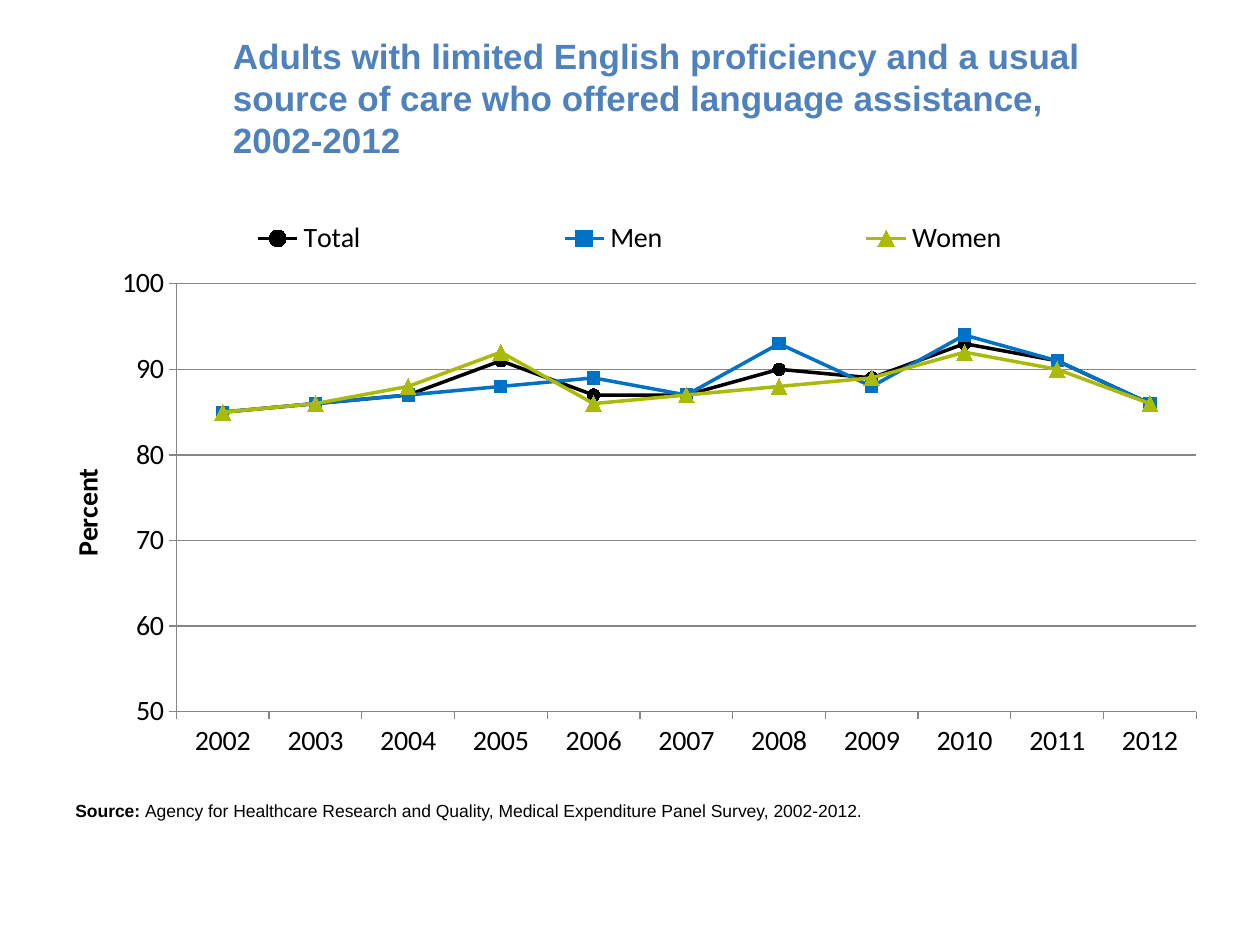
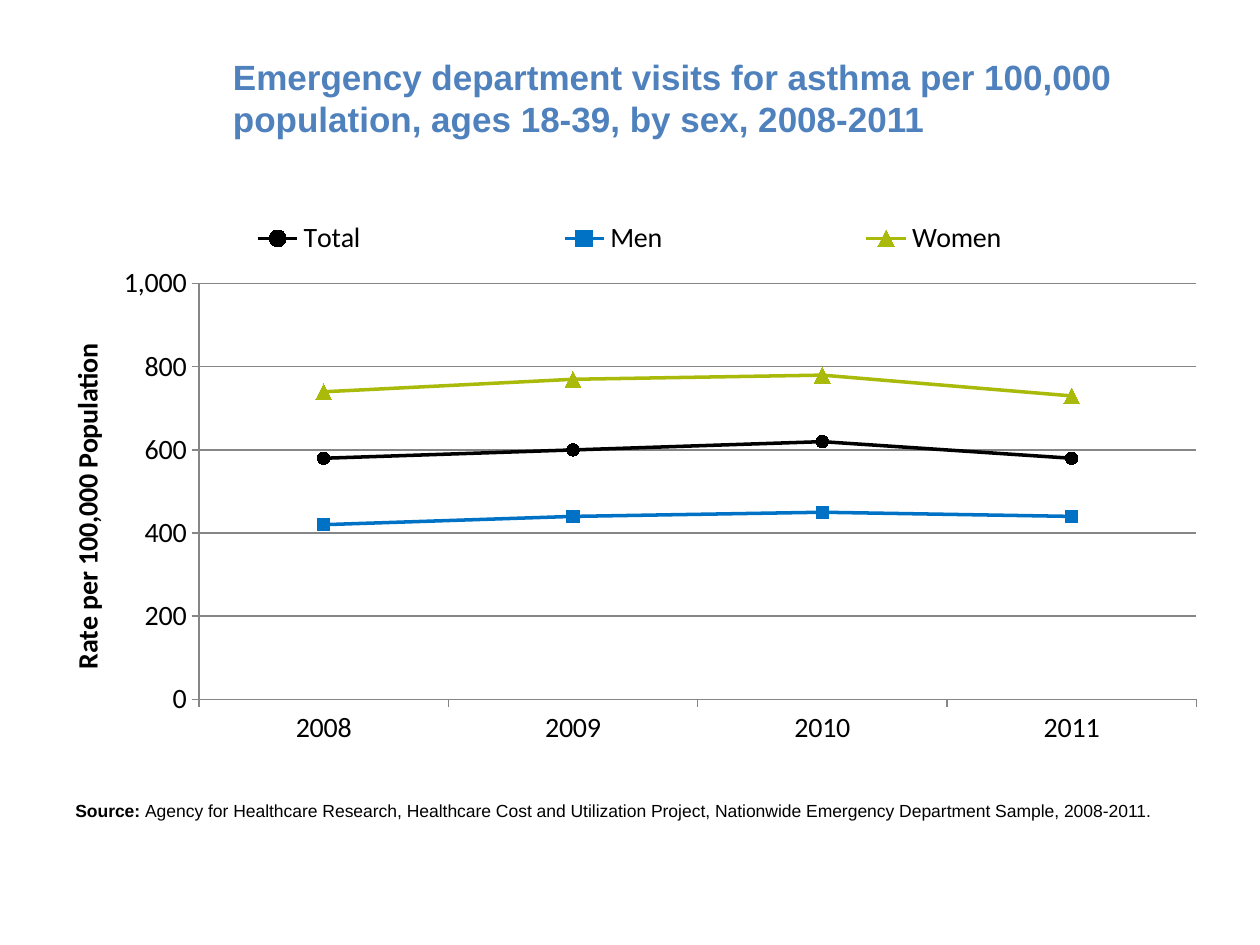
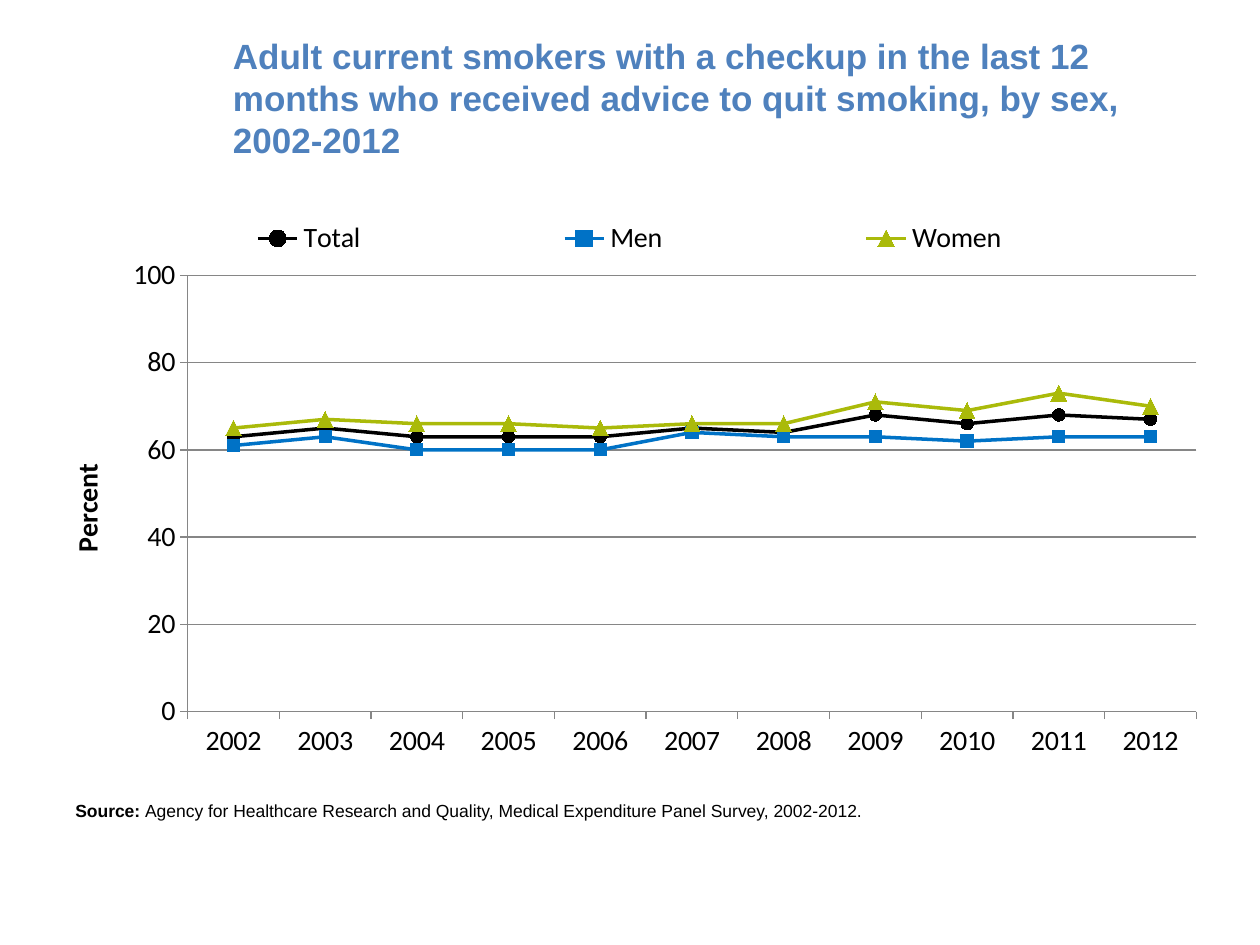
from dataclasses import dataclass

from lxml import etree
from pptx import Presentation
from pptx import util as u
from pptx.chart.data import CategoryChartData
from pptx.dml.color import RGBColor
from pptx.enum import chart as ch
from pptx.enum import text
from pptx.oxml import ns


@dataclass(frozen=True)
class Theme:
    title: str = "4F81BD"
    ink: str = "000000"
    men: str = "0072C6"
    women: str = "AABA0A"
    rule: str = "868686"
    sans: str = "Arial"
    chart_font: str = "Calibri"
    title_size: int = 20
    chart_size: int = 16
    note_size: int = 10


theme = Theme()


def style(font, name, size, color=theme.ink, bold=False):
    font.name, font.size, font.bold = name, u.Pt(size), bold
    font.color.rgb = RGBColor.from_string(color)


def place(parent, index, box, inner=False):
    for old in parent.findall(ns.qn("c:layout")):
        parent.remove(old)
    layout = etree.Element(ns.qn("c:layout"))
    parent.insert(index, layout)
    manual = etree.SubElement(layout, ns.qn("c:manualLayout"))
    settings = [("layoutTarget", "inner")] if inner else []
    settings += [("xMode", "edge"), ("yMode", "edge"), *zip("xywh", box)]
    for tag, value in settings:
        etree.SubElement(manual, ns.qn(f"c:{tag}")).set("val", str(value))


prs = Presentation()
prs.slide_width, prs.slide_height = u.Inches(10), u.Inches(7.5)
W, H = prs.slide_width, prs.slide_height
left, width = int(W * 0.05), int(W * 0.9)
title_left = int(W * 0.175)

markers = ch.XL_MARKER_STYLE
groups = [
    ("Total", theme.ink, markers.CIRCLE, 7),
    ("Men", theme.men, markers.SQUARE, 7),
    ("Women", theme.women, markers.TRIANGLE, 9),
]
survey = "Agency for Healthcare Research and Quality, Medical Expenditure Panel Survey, 2002-2012."
measures = [
    dict(
        title="Adults with limited English proficiency and a usual source of care "
              "who offered language assistance,\v2002-2012",
        years=range(2002, 2013),
        values=[
            (85, 86, 87, 91, 87, 87, 90, 89, 93, 91, 86),
            (85, 86, 87, 88, 89, 87, 93, 88, 94, 91, 86),
            (85, 86, 88, 92, 86, 87, 88, 89, 92, 90, 86),
        ],
        axis="Percent", scale=(50, 100, 10), fmt="0",
        plot=(0.1, 0.145, 0.9, 0.755), source=survey,
    ),
    dict(
        title="Emergency department visits for asthma per 100,000 population, "
              "ages 18-39, by sex, 2008-2011",
        years=range(2008, 2012),
        values=[(580, 600, 620, 580), (420, 440, 450, 440), (740, 770, 780, 730)],
        axis="Rate per 100,000 Population", scale=(0, 1000, 200), fmt="#,##0",
        plot=(0.12, 0.145, 0.88, 0.733),
        source="Agency for Healthcare Research, Healthcare Cost and Utilization Project, "
               "Nationwide Emergency Department Sample, 2008-2011.",
    ),
    dict(
        title="Adult current smokers with a checkup in the last 12 months "
              "who received advice to quit smoking, by sex, 2002-2012",
        years=range(2002, 2013),
        values=[
            (63, 65, 63, 63, 63, 65, 64, 68, 66, 68, 67),
            (61, 63, 60, 60, 60, 64, 63, 63, 62, 63, 63),
            (65, 67, 66, 66, 65, 66, 66, 71, 69, 73, 70),
        ],
        axis="Percent", scale=(0, 100, 20), fmt="0",
        plot=(0.11, 0.13, 0.89, 0.77), source=survey,
    ),
]

for measure in measures:
    s = prs.slides.add_slide(prs.slide_layouts[6])

    tf = s.shapes.add_textbox(title_left, int(H * 0.04), left + width - title_left, u.Inches(0.95)).text_frame
    tf.word_wrap = True
    tf.vertical_anchor = text.MSO_ANCHOR.MIDDLE
    tf.text = measure["title"]
    for r in tf.paragraphs[0].runs:
        style(r.font, theme.sans, theme.title_size, theme.title, True)

    data = CategoryChartData(number_format=measure["fmt"])
    data.categories = [str(year) for year in measure["years"]]
    for group, values in zip(groups, measure["values"]):
        data.add_series(group[0], values)
    chart = s.shapes.add_chart(
        ch.XL_CHART_TYPE.LINE_MARKERS, left, u.Inches(1.6), width, int(H * 0.6), data
    ).chart
    style(chart.font, theme.sans, theme.note_size)
    chart.has_title = False
    chart.plots[0].vary_by_categories = False
    place(chart.plots[0]._element.getparent(), 0, measure["plot"], True)

    chart.has_legend = True
    chart.legend.position = ch.XL_LEGEND_POSITION.TOP
    chart.legend.include_in_layout = False
    style(chart.legend.font, theme.chart_font, theme.chart_size)
    place(chart.legend._element, 1, (0, 0.02, 1, 0.09))

    value_axis = chart.value_axis
    value_axis.minimum_scale, value_axis.maximum_scale, value_axis.major_unit = measure["scale"]
    value_axis.has_major_gridlines = True
    value_axis.has_title = True
    tf = value_axis.axis_title.text_frame
    tf.text = measure["axis"]
    style(tf.paragraphs[0].runs[0].font, theme.chart_font, theme.chart_size, bold=True)
    value_axis.tick_labels.number_format = measure["fmt"]
    value_axis.tick_labels.number_format_is_linked = False
    for axis in (chart.category_axis, value_axis):
        axis.major_tick_mark = ch.XL_TICK_MARK.OUTSIDE
        axis.minor_tick_mark = ch.XL_TICK_MARK.NONE
        style(axis.tick_labels.font, theme.chart_font, theme.chart_size)
    for rule in (chart.category_axis, value_axis, value_axis.major_gridlines):
        rule.format.line.color.rgb = RGBColor.from_string(theme.rule)
        rule.format.line.width = u.Pt(0.75)

    for series, (_, color, marker, size) in zip(chart.plots[0].series, groups):
        rgb = RGBColor.from_string(color)
        series.smooth = False
        series.format.line.color.rgb = rgb
        series.format.line.width = u.Pt(2)
        series.marker.style, series.marker.size = marker, size
        series.marker.format.fill.solid()
        series.marker.format.fill.fore_color.rgb = rgb
        series.marker.format.line.color.rgb = rgb

    tf = s.shapes.add_textbox(left, int(H * 0.84), width, u.Inches(0.27)).text_frame
    tf.word_wrap = True
    tf.auto_size = text.MSO_AUTO_SIZE.SHAPE_TO_FIT_TEXT
    p = tf.paragraphs[0]
    for words, bold in (("Source: ", True), (measure["source"], False)):
        r = p.add_run()
        r.text = words
        style(r.font, theme.sans, theme.note_size, bold=bold)

prs.save("out.pptx")
